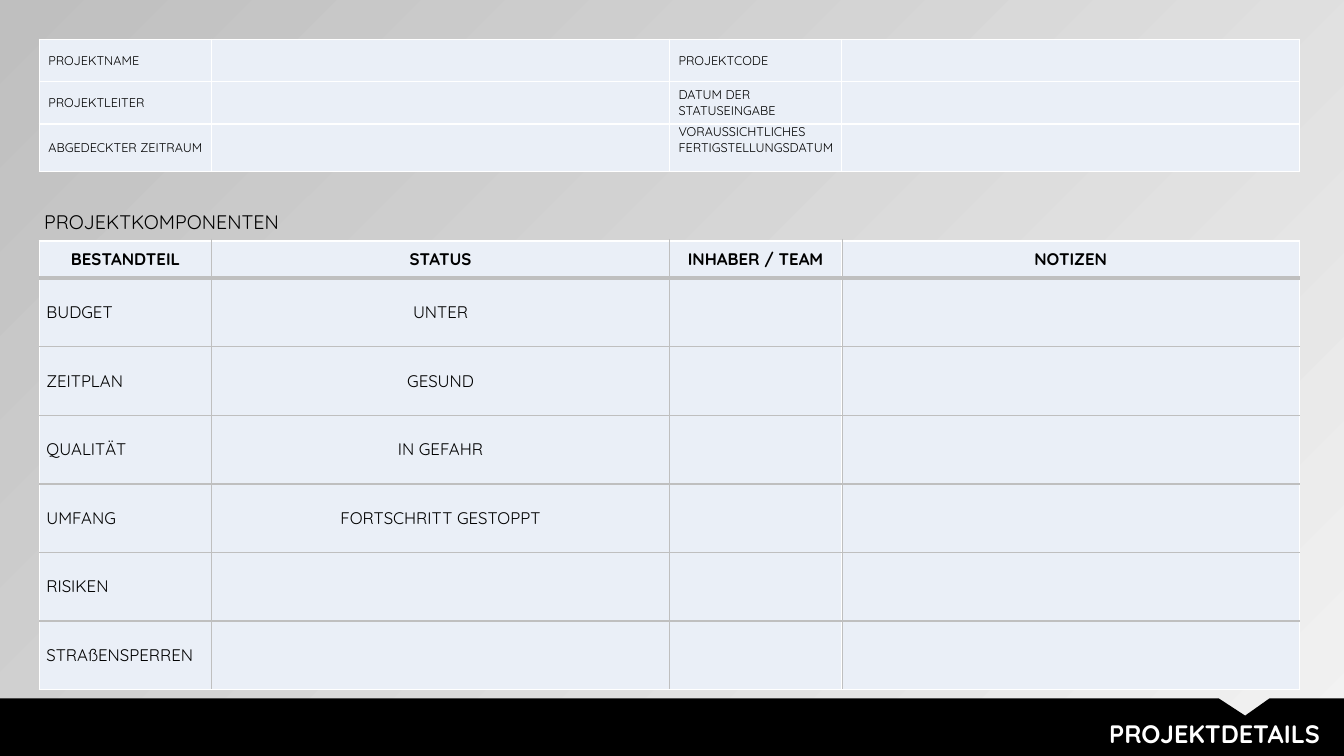
from itertools import accumulate

from lxml.etree import SubElement
from pptx import Presentation
from pptx.dml.color import RGBColor
from pptx.enum.shapes import MSO_CONNECTOR
from pptx.enum.text import MSO_ANCHOR as Anchor, PP_ALIGN as Align
from pptx.oxml.ns import qn
from pptx.util import Inches, Pt

FONT = "Quicksand"
BLACK, WHITE, PALE, GREY, LIGHT = "000000", "FFFFFF", "EAEFF7", "BFBFBF", "F2F2F2"

PROJECT = [
    ("PROJEKTNAME", "", "PROJEKTCODE", ""),
    ("PROJEKTLEITER", "", "DATUM DER STATUSEINGABE", ""),
    ("ABGEDECKTER ZEITRAUM", "", "VORAUSSICHTLICHES FERTIGSTELLUNGSDATUM", ""),
]
COMPONENTS = [
    ("BESTANDTEIL", "STATUS", "INHABER / TEAM", "NOTIZEN"),
    ("BUDGET", "UNTER", "", ""),
    ("ZEITPLAN", "GESUND", "", ""),
    ("QUALITÄT", "IN GEFAHR", "", ""),
    ("UMFANG", "FORTSCHRITT GESTOPPT", "", ""),
    ("RISIKEN", "", "", ""),
    ("STRAßENSPERREN", "", "", ""),
]
HEADING = "PROJEKTKOMPONENTEN"
TITLE = "PROJEKTDETAILS"

LEFT, PROJECT_TOP, COMPONENTS_TOP = 0.39, 0.39, 2.39
COLUMNS = [1.71, 4.54, 1.71, 4.54]
PROJECT_ROWS = [0.42, 0.42, 0.47]
COMPONENT_ROWS = [0.37] + [0.68] * 6
FOOTER = [(0, 6.93), (12.09, 6.93), (12.35, 7.1), (12.59, 6.93),
          (13.33, 6.93), (13.33, 7.5), (0, 7.5)]


def rgb(color):
    return RGBColor.from_string(color)


def format_text(paragraph, size, color=BLACK, bold=False, align=Align.LEFT):
    paragraph.alignment = align
    for font in [paragraph.font] + [run.font for run in paragraph.runs]:
        font.name, font.size, font.bold = FONT, Pt(size), bold
        font.color.rgb = rgb(color)


def border_cell(cell):
    properties = cell._tc.get_or_add_tcPr()
    for position, side in enumerate(("a:lnL", "a:lnR", "a:lnT", "a:lnB")):
        edge = properties.makeelement(qn(side), {"w": str(Pt(1))})
        SubElement(SubElement(edge, qn("a:solidFill")), qn("a:srgbClr"), val=WHITE)
        properties.insert(position, edge)


def add_grid(content, top, heights, size, indent, header=False):
    table = slide.shapes.add_table(
        len(content), len(COLUMNS), Inches(LEFT), Inches(top),
        Inches(sum(COLUMNS)), Inches(sum(heights))).table
    for column, width in zip(table.columns, COLUMNS):
        column.width = Inches(width)
    for row, height in zip(table.rows, heights):
        row.height = Inches(height)
    for r, texts in enumerate(content):
        for c, text in enumerate(texts):
            cell = table.cell(r, c)
            heads = header and r == 0
            centred = header and (heads or c > 0)
            cell.text_frame.text = text
            cell.vertical_anchor = Anchor.MIDDLE
            cell.margin_left = 0 if centred else Inches(indent)
            cell.margin_top = cell.margin_right = cell.margin_bottom = 0
            cell.fill.solid()
            cell.fill.fore_color.rgb = rgb(PALE)
            format_text(cell.text_frame.paragraphs[0], size, bold=heads,
                        align=Align.CENTER if centred else Align.LEFT)
            border_cell(cell)
    return table


def add_rule(x1, y1, x2, y2, width):
    rule = slide.shapes.add_connector(
        MSO_CONNECTOR.STRAIGHT, Inches(x1), Inches(y1), Inches(x2), Inches(y2))
    rule.line.color.rgb = rgb(GREY)
    rule.line.width = Pt(width)
    SubElement(rule._element.spPr, qn("a:effectLst"))


def add_label(text, left, top, width, height, size, **style):
    label = slide.shapes.add_textbox(
        Inches(left), Inches(top), Inches(width), Inches(height)).text_frame
    label.word_wrap = True
    label.text = text
    format_text(label.paragraphs[0], size, **style)


deck = Presentation()
deck.slide_width, deck.slide_height = Inches(13.33), Inches(7.5)
slide = deck.slides.add_slide(deck.slide_layouts[6])

backdrop = slide.background.fill
backdrop.gradient()
backdrop.gradient_angle = 135
for stop, color, position in zip(backdrop.gradient_stops, (LIGHT, GREY), (0, 1)):
    stop.color.rgb = rgb(color)
    stop.position = position

project = add_grid(PROJECT, PROJECT_TOP, PROJECT_ROWS, 9, 0.09)
project.cell(2, 2).vertical_anchor = Anchor.TOP
add_grid(COMPONENTS, COMPONENTS_TOP, COMPONENT_ROWS, 12, 0.07, header=True)
add_label(HEADING, 0.34, 2.03, 3.65, 0.34, 14)

right = LEFT + sum(COLUMNS)
bottom = COMPONENTS_TOP + sum(COMPONENT_ROWS)
for i, y in enumerate(accumulate(COMPONENT_ROWS[:-1], initial=COMPONENTS_TOP)):
    if i:
        add_rule(LEFT, y, right, y, 2.5 if i == 1 else 1)
for x in accumulate(COLUMNS[1:-1], initial=LEFT + COLUMNS[0]):
    add_rule(x, COMPONENTS_TOP - 0.02, x, bottom, 0.5)

corners = [(Inches(x), Inches(y)) for x, y in FOOTER]
outline = slide.shapes.build_freeform(*corners[0])
outline.add_line_segments(corners[1:], close=True)
footer = outline.convert_to_shape()
footer.shadow.inherit = False
footer.fill.solid()
footer.fill.fore_color.rgb = rgb(BLACK)
footer.line.fill.background()
add_label(TITLE, 0.64, 7.08, 12.55, 0.4, 18, color=WHITE, bold=True, align=Align.RIGHT)

deck.save("out.pptx")
